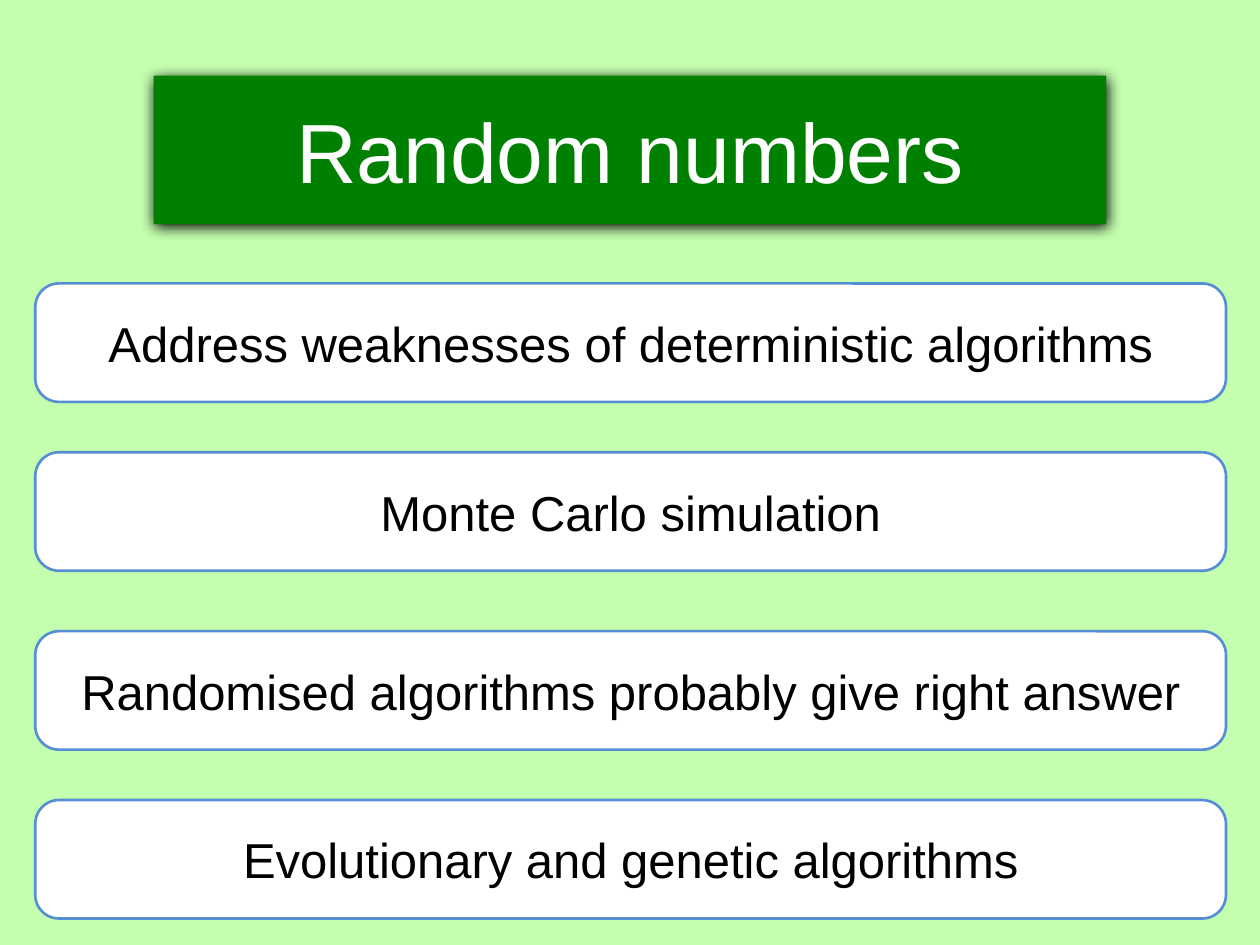
from dataclasses import dataclass

from lxml import etree
from pptx import Presentation
from pptx.dml.color import RGBColor
from pptx.enum.shapes import MSO_SHAPE
from pptx.enum.text import MSO_ANCHOR, PP_ALIGN
from pptx.oxml.ns import qn
from pptx.util import Inches, Pt

RECTANGLE = MSO_SHAPE.RECTANGLE
ROUNDED = MSO_SHAPE.ROUNDED_RECTANGLE
MIDDLE = MSO_ANCHOR.MIDDLE
CENTER = PP_ALIGN.CENTER


@dataclass(frozen=True)
class Theme:
    font: str = "Arial"
    background: str = "C3FFAF"
    banner: str = "008000"
    banner_text: str = "FFFFFF"
    card: str = "FFFFFF"
    card_text: str = "000000"
    outline: str = "558ED5"
    shadow: str = "000000"
    title_size: int = 48
    card_size: int = 28
    outline_width: float = 1.5


class SlideBuilder:
    """Draws the banner and topic cards of one slide in a shared style."""

    def __init__(self, slide, theme):
        self.slide = slide
        self.theme = theme

    def background(self):
        fill = self.slide.background.fill
        fill.solid()
        fill.fore_color.rgb = RGBColor.from_string(self.theme.background)

    def panel(self, kind, box, fill, text, size, color):
        panel = self.slide.shapes.add_shape(kind, *map(Inches, box))
        panel.shadow.inherit = False
        panel.fill.solid()
        panel.fill.fore_color.rgb = RGBColor.from_string(fill)
        frame = panel.text_frame
        frame.word_wrap = True
        frame.vertical_anchor = MIDDLE
        paragraph = frame.paragraphs[0]
        paragraph.alignment = CENTER
        run = paragraph.add_run()
        run.text = text
        run.font.name = self.theme.font
        run.font.size = Pt(size)
        run.font.color.rgb = RGBColor.from_string(color)
        return panel

    def banner(self, box, text):
        theme = self.theme
        banner = self.panel(RECTANGLE, box, theme.banner, text,
                            theme.title_size, theme.banner_text)
        banner.line.fill.background()
        effects = banner._element.spPr.find(qn("a:effectLst"))
        shadow = etree.SubElement(
            effects, qn("a:outerShdw"), blurRad=str(Pt(8.5)),
            dist=str(Pt(1)), dir="5400000", rotWithShape="0")
        etree.SubElement(shadow, qn("a:srgbClr"), val=theme.shadow)

    def card(self, box, text):
        theme = self.theme
        card = self.panel(ROUNDED, box, theme.card, text,
                          theme.card_size, theme.card_text)
        card.adjustments[0] = 0.2
        card.line.color.rgb = RGBColor.from_string(theme.outline)
        card.line.width = Pt(theme.outline_width)


def main():
    presentation = Presentation()
    presentation.slide_width = Inches(10)
    presentation.slide_height = Inches(7.5)
    slide = presentation.slides.add_slide(presentation.slide_layouts[6])
    builder = SlideBuilder(slide, Theme())
    builder.background()
    builder.banner((1.22, 0.6, 7.56, 1.18), "Random numbers")

    topics = (
        "Address weaknesses of deterministic algorithms",
        "Monte Carlo simulation",
        "Randomised algorithms probably give right answer",
        "Evolutionary and genetic algorithms",
    )
    first_top, pair_pitch, card_pitch = 2.25, 2.76, 1.34
    for index, topic in enumerate(topics):
        pair, member = divmod(index, 2)
        top = first_top + pair * pair_pitch + member * card_pitch
        builder.card((0.28, top, 9.45, 0.94), topic)

    presentation.save("out.pptx")


if __name__ == "__main__":
    main()
